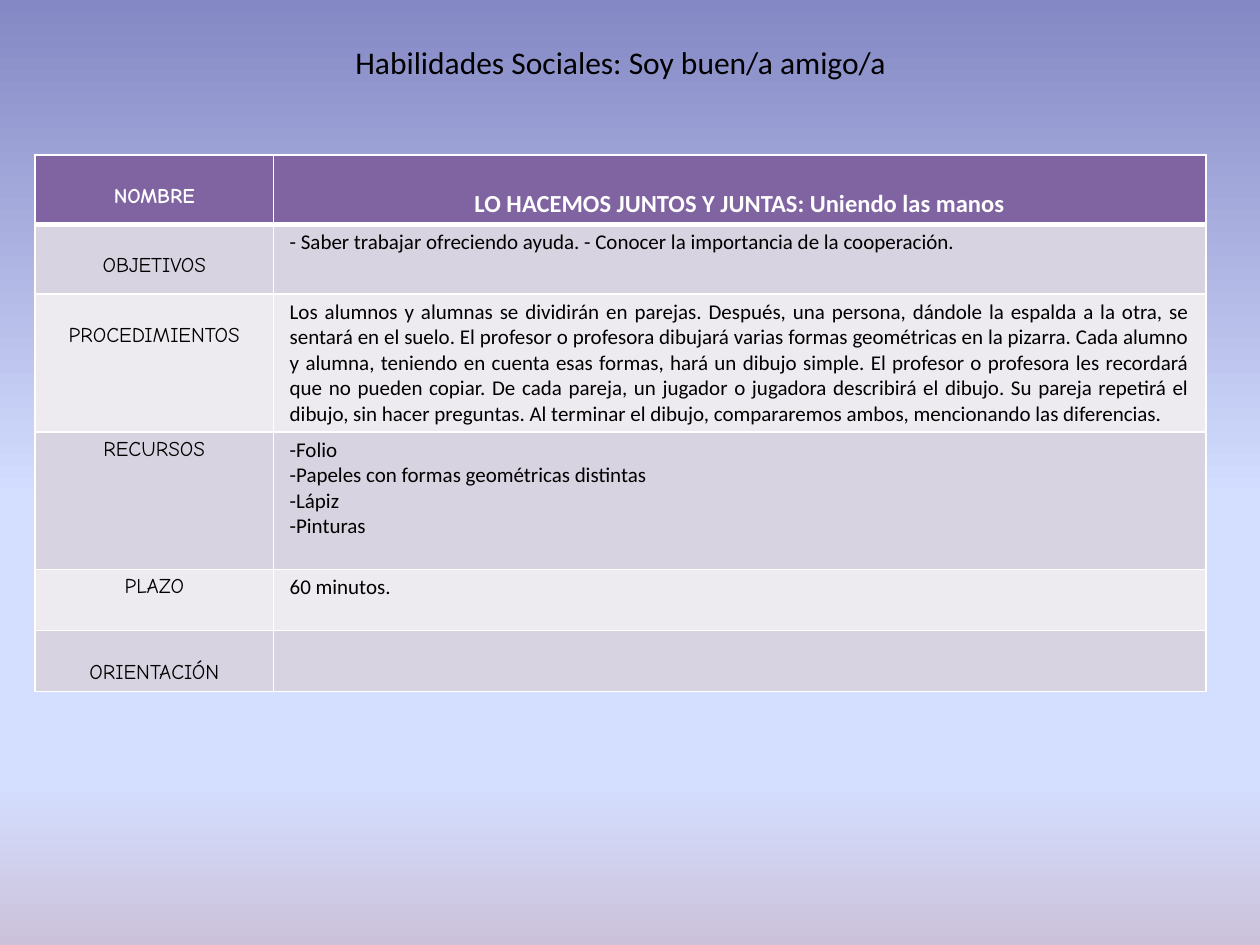
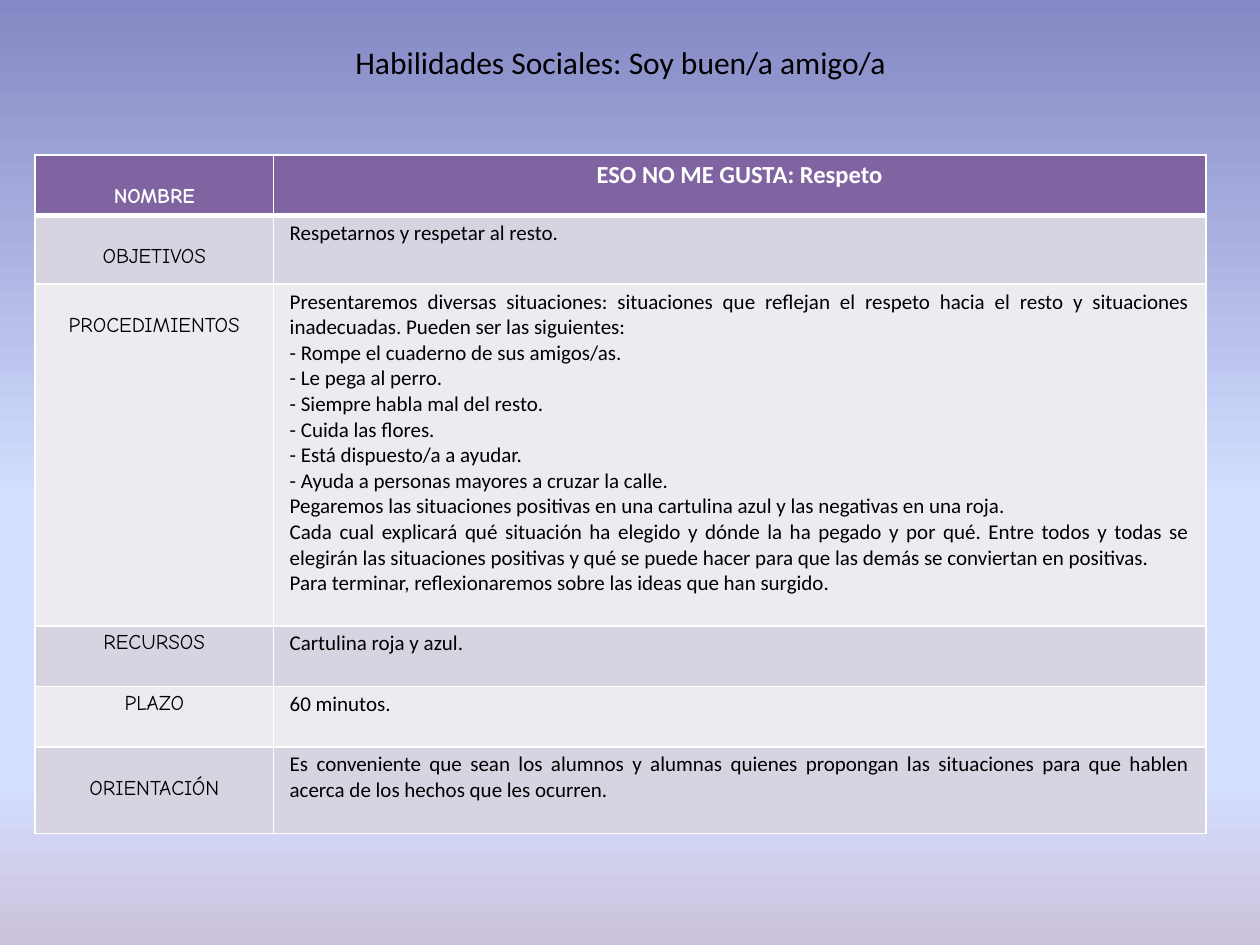
from lxml import etree
from pptx import Presentation
from pptx.dml.color import RGBColor
from pptx.enum.text import MSO_ANCHOR, MSO_AUTO_SIZE, PP_ALIGN
from pptx.oxml.ns import qn
from pptx.util import Cm, Pt

LEFT, CENTER, JUSTIFY = PP_ALIGN.LEFT, PP_ALIGN.CENTER, PP_ALIGN.JUSTIFY

# Shared content
TITLE = "Habilidades Sociales: Soy buen/a amigo/a"
LABELS = ["NOMBRE", "OBJETIVOS", "PROCEDIMIENTOS", "RECURSOS", "PLAZO", "ORIENTACIÓN"]
LOWERED_LABELS = {"NOMBRE", "OBJETIVOS", "PROCEDIMIENTOS", "ORIENTACIÓN"}

# One entry per slide: row heights in cm, gap above the activity name, text by row
ACTIVITIES = [
    {
        "heights": [1.39, 1.41, 2.78, 2.77, 1.23, 1.23],
        "name_gap": 0.6,
        "rows": [
            ["LO HACEMOS JUNTOS Y JUNTAS: Uniendo las manos"],
            ["- Saber trabajar ofreciendo ayuda. - Conocer la importancia de la cooperación."],
            ["Los alumnos y alumnas se dividirán en parejas. Después, una persona, dándole la "
             "espalda a la otra, se sentará en el suelo. El profesor o profesora dibujará varias "
             "formas geométricas en la pizarra. Cada alumno y alumna, teniendo en cuenta esas "
             "formas, hará un dibujo simple. El profesor o profesora les recordará que no pueden "
             "copiar. De cada pareja, un jugador o jugadora describirá el dibujo. Su pareja "
             "repetirá el dibujo, sin hacer preguntas. Al terminar el dibujo, compararemos ambos, "
             "mencionando las diferencias."],
            ["-Folio", "-Papeles con formas geométricas distintas", "-Lápiz", "-Pinturas"],
            ["60 minutos."],
            [],
        ],
    },
    {
        "heights": [1.22, 1.39, 6.89, 1.22, 1.22, 1.74],
        "name_gap": 0,
        "rows": [
            ["ESO NO ME GUSTA: Respeto"],
            ["Respetarnos y respetar al resto."],
            ["Presentaremos diversas situaciones: situaciones que reflejan el respeto hacia el "
             "resto y situaciones inadecuadas. Pueden ser las siguientes:",
             "- Rompe el cuaderno de sus amigos/as.",
             "- Le pega al perro.",
             "- Siempre habla mal del resto.",
             "- Cuida las flores.",
             "- Está dispuesto/a a ayudar.",
             "- Ayuda a personas mayores a cruzar la calle.",
             "Pegaremos las situaciones positivas en una cartulina azul y las negativas en una "
             "roja.",
             "Cada cual explicará qué situación ha elegido y dónde la ha pegado y por qué. Entre "
             "todos y todas se elegirán las situaciones positivas y qué se puede hacer para que "
             "las demás se conviertan en positivas.",
             "Para terminar, reflexionaremos sobre las ideas que han surgido."],
            ["Cartulina roja y azul."],
            ["60 minutos."],
            ["Es conveniente que sean los alumnos y alumnas quienes propongan las situaciones "
             "para que hablen acerca de los hechos que les ocurren."],
        ],
    },
]

# Shared look
WHITE = RGBColor(0xFF, 0xFF, 0xFF)
BLACK = RGBColor(0x00, 0x00, 0x00)
PURPLE = RGBColor(0x80, 0x64, 0xA2)
BAND_DARK = RGBColor(0xD8, 0xD3, 0xE0)
BAND_LIGHT = RGBColor(0xED, 0xEA, 0xF0)
SKY_STOPS = [
    (0, RGBColor(0x84, 0x88, 0xC4)),
    (53, RGBColor(0xD4, 0xDE, 0xFF)),
    (83, RGBColor(0xD4, 0xDE, 0xFF)),
    (100, RGBColor(0xCC, 0xC1, 0xDA)),
]
BODY_FONT, LABEL_FONT = "Calibri", "Comic Neue"
COLUMN_WIDTHS = [4.8, 18.8]
MARGIN_X, MARGIN_Y = 0.33, 0.1
LABEL_GAP = 0.5


def set_background(master):
    """Give every slide the vertical sky gradient."""
    fill = master.background.fill
    fill.gradient()
    fill.gradient_angle = 270
    stops = master.element.find(".//" + qn("a:gsLst"))
    for stop in list(stops):
        stops.remove(stop)
    for percent, color in SKY_STOPS:
        stop = etree.SubElement(stops, qn("a:gs"), pos=str(percent * 1000))
        etree.SubElement(stop, qn("a:srgbClr"), val=str(color))


def style_font(font, name, size, color, bold=False):
    font.name, font.size, font.bold = name, Pt(size), bold
    font.color.rgb = color


def set_borders(cell, bottom):
    """Draw white borders, 1 pt except for the given bottom width."""
    tc_pr = cell._tc.get_or_add_tcPr()
    widths = {"lnL": 1, "lnR": 1, "lnT": 1, "lnB": bottom}
    for position, (side, width) in enumerate(widths.items()):
        line = etree.Element(qn("a:" + side), w=str(Pt(width)))
        fill = etree.SubElement(line, qn("a:solidFill"))
        etree.SubElement(fill, qn("a:srgbClr"), val=str(WHITE))
        tc_pr.insert(position, line)


def fill_cell(cell, lines, align, gap, background, bottom, **font):
    cell.margin_left = cell.margin_right = Cm(MARGIN_X)
    cell.margin_top, cell.margin_bottom = Cm(MARGIN_Y + gap), Cm(MARGIN_Y)
    cell.fill.solid()
    cell.fill.fore_color.rgb = background
    set_borders(cell, bottom)
    tf = cell.text_frame
    tf.text = "\n".join(lines)
    for p in tf.paragraphs:
        p.alignment = align
        for r in p.runs:
            style_font(r.font, **font)


def add_title(s):
    sp = s.shapes.title
    sp.left, sp.top, sp.width, sp.height = Cm(6.91), Cm(0.74), Cm(12.19), Cm(1.02)
    tf = sp.text_frame
    tf.text = TITLE
    tf.auto_size = MSO_AUTO_SIZE.NONE
    tf.vertical_anchor = MSO_ANCHOR.TOP
    p = tf.paragraphs[0]
    p.alignment = LEFT
    style_font(p.runs[0].font, BODY_FONT, 18, BLACK)


def add_activity_table(s, activity):
    heights = activity["heights"]
    table = s.shapes.add_table(
        len(LABELS), len(COLUMN_WIDTHS), Cm(0.71), Cm(3.12),
        Cm(sum(COLUMN_WIDTHS)), Cm(sum(heights))).table
    for column, width in zip(table.columns, COLUMN_WIDTHS):
        column.width = Cm(width)

    for i, (label, lines) in enumerate(zip(LABELS, activity["rows"])):
        table.rows[i].height = Cm(heights[i])
        header = i == 0
        band = BAND_DARK if i % 2 else BAND_LIGHT
        shared = {
            "background": PURPLE if header else band,
            "bottom": 3 if header else 1,
            "color": WHITE if header else BLACK,
            "bold": header,
        }
        label_gap = LABEL_GAP if label in LOWERED_LABELS else 0
        fill_cell(table.cell(i, 0), [label], CENTER, label_gap,
                  name=LABEL_FONT, size=12, **shared)
        fill_cell(table.cell(i, 1), lines, CENTER if header else JUSTIFY,
                  activity["name_gap"] if header else 0,
                  name=BODY_FONT, size=14 if header else 12, **shared)


def main():
    prs = Presentation()
    prs.slide_width, prs.slide_height = Cm(25.4), Cm(19.05)
    set_background(prs.slide_master)
    title_only = prs.slide_layouts[5]
    for activity in ACTIVITIES:
        s = prs.slides.add_slide(title_only)
        add_title(s)
        add_activity_table(s, activity)
    prs.save("out.pptx")


if __name__ == "__main__":
    main()
